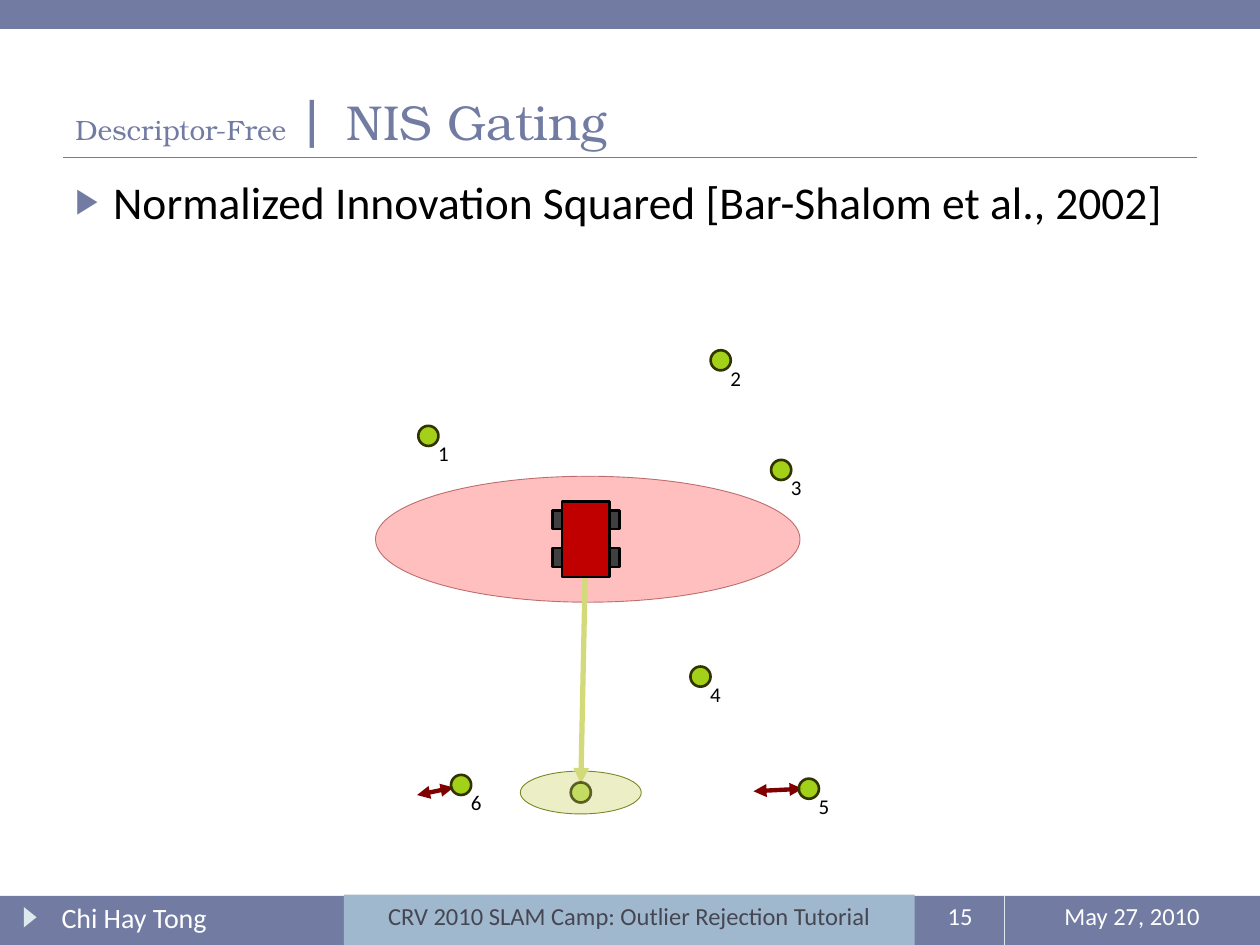
import pptx
import pptx.util
import pptx.dml.color
import pptx.enum.shapes
import pptx.enum.text
import pptx.oxml.ns
from lxml import etree

COLUMNS, ROWS = 100, 75
CELL = pptx.util.Inches(0.1)
COLORS = {
    "theme": "727CA3", "pale": "DDE9EC", "banner": "9FB8CD", "slate": "464653",
    "white": "FFFFFF", "black": "000000", "red": "FF0000", "maroon": "800000",
    "landmark": "99CC00", "landmark_edge": "333300", "gate": "E4E9AF",
    "gate_edge": "7D8525", "ray": "D2DA7A", "robot": "C00000", "wheel": "404040",
}
SERIF, SANS = "TeX Gyre Bonum", "Calibri"
SHAPE = pptx.enum.shapes.MSO_SHAPE
ALIGN = pptx.enum.text.PP_ALIGN
ANCHOR = pptx.enum.text.MSO_ANCHOR
DOT = 1.6
LANDMARKS = [(33.2, 33.8), (56.4, 27.8), (61.2, 36.5), (54.8, 52.9), (63.4, 61.8), (35.8, 61.5)]


def grid(*cells):
    return [round(cell * CELL) for cell in cells]


def rgb(name):
    return pptx.dml.color.RGBColor.from_string(COLORS[name])


def child(parent, tag, **attributes):
    return etree.SubElement(parent, pptx.oxml.ns.qn(tag), attributes)


def paint(fill_format, holder, color, opacity):
    fill_format.solid()
    fill_format.fore_color.rgb = rgb(color)
    if opacity < 100:
        swatch = holder.find(".//" + pptx.oxml.ns.qn("a:srgbClr"))
        child(swatch, "a:alpha", val=str(opacity * 1000))


def add_figure(shapes, kind, at, fill, opacity=100, edge=None, width=1.5, edge_opacity=100):
    figure = shapes.add_shape(kind, *grid(*at))
    figure.shadow.inherit = False
    properties = figure._element.spPr
    paint(figure.fill, properties, fill, opacity)
    if edge:
        figure.line.width = pptx.util.Pt(width)
        outline = properties.find(pptx.oxml.ns.qn("a:ln"))
        paint(figure.line.fill, outline, edge, edge_opacity)
    else:
        figure.line.fill.background()
    return figure


def add_line(shapes, start, end, color, width, heads=()):
    line = shapes.add_connector(pptx.enum.shapes.MSO_CONNECTOR.STRAIGHT, *grid(*start, *end))
    line.line.color.rgb = rgb(color)
    line.line.width = pptx.util.Pt(width)
    outline = line._element.spPr.find(pptx.oxml.ns.qn("a:ln"))
    for head in heads:
        child(outline, head, type="triangle")
    child(line._element.spPr, "a:effectLst")


def style(font, size, color, face=SANS):
    font.size = pptx.util.Pt(size)
    font.name = face
    font.color.rgb = rgb(color)


def set_text(frame, text, size, color, align=ALIGN.LEFT):
    frame.text = text
    frame.vertical_anchor = ANCHOR.TOP
    paragraph = frame.paragraphs[0]
    paragraph.alignment = align
    style(paragraph.runs[0].font, size, color)


def add_text(shapes, at, text, size, color, align=ALIGN.LEFT, wrap=True):
    box = shapes.add_textbox(*grid(*at))
    box.text_frame.word_wrap = wrap
    set_text(box.text_frame, text, size, color, align)
    return box


def add_title(shapes):
    title = shapes.add_textbox(*grid(5, 1.7, 90, 10.8)).text_frame
    title.word_wrap = True
    title.vertical_anchor = ANCHOR.BOTTOM
    for text, size in [("Descriptor-Free ", 16), ("| ", 32), ("NIS Gating", 28)]:
        run = title.paragraphs[0].add_run()
        run.text = text
        style(run.font, size, "theme", SERIF)


def add_bullet(shapes):
    body = add_text(shapes, (5, 13.3, 90, 54),
                    "Normalized Innovation Squared [Bar-Shalom et al., 2002]", 26, "black")
    properties = body.text_frame.paragraphs[0]._p.get_or_add_pPr()
    indent = 3 * CELL
    properties.set("marL", str(indent))
    properties.set("indent", str(-indent))
    child(child(properties, "a:buClr"), "a:srgbClr", val=COLORS["theme"])
    child(properties, "a:buSzPct", val="76000")
    child(properties, "a:buFont", typeface=SANS)
    child(properties, "a:buChar", char="▶")


def add_frame(shapes):
    add_figure(shapes, SHAPE.RECTANGLE, (0, 71.1, COLUMNS, 3.9), "theme")
    add_line(shapes, (5, 12.5), (95, 12.5), "theme", 0.75)
    add_figure(shapes, SHAPE.ISOSCELES_TRIANGLE, (1.6, 72.3, 1.6, 1), "pale").rotation = 90
    add_figure(shapes, SHAPE.RECTANGLE, (0, 0, COLUMNS, 2.3), "theme")
    add_line(shapes, (79.7, 71.1), (79.7, ROWS), "pale", 0.75)


def add_footer(shapes):
    add_text(shapes, (72.7, 71, 7, 4), "15", 14, "white", ALIGN.CENTER)
    add_text(shapes, (79.7, 71, 20.3, 4), "May 27, 2010", 14, "white", ALIGN.CENTER)
    add_text(shapes, (3.9, 71, 21.7, 4), "Chi Hay Tong", 16, "white")
    banner = add_figure(shapes, SHAPE.RECTANGLE, (27.3, 71, 45.3, 4), "banner")
    set_text(banner.text_frame, "CRV 2010 SLAM Camp: Outlier Rejection Tutorial",
             14, "slate", ALIGN.CENTER)


def add_landmark(shapes, number, left, top):
    landmark = shapes.add_group_shape().shapes
    add_figure(landmark, SHAPE.OVAL, (left, top, DOT, DOT), "landmark", 90, "landmark_edge")
    label = add_text(landmark, (left + 0.58, top + 0.7, 2.9, 3), str(number), 12, "black", wrap=False)
    label.text_frame.auto_size = pptx.enum.text.MSO_AUTO_SIZE.SHAPE_TO_FIT_TEXT


def add_robot(shapes):
    robot = shapes.add_group_shape().shapes
    center_x, center_y = 46.5, 42.8
    add_figure(robot, SHAPE.OVAL, (41.3, 61.2, 9.6, 3.4), "gate", 70, "gate_edge", 0.5)
    add_line(robot, (center_x, center_y), (46.1, 62.2), "ray", 3, ["a:tailEnd"])
    add_figure(robot, SHAPE.RECTANGLE, (center_x - 1.9, center_y - 3, 3.8, 6),
               "robot", edge="black")
    for wheel_x in (center_x - 2.65, center_x + 1.9):
        for wheel_y in (center_y - 2.3, center_y + 0.7):
            add_figure(robot, SHAPE.RECTANGLE, (wheel_x, wheel_y, 0.75, 1.5),
                       "wheel", edge="black")
    add_figure(robot, SHAPE.OVAL, (45.3, 62.1, DOT, DOT), "landmark", 50,
               "landmark_edge", edge_opacity=75)


def main():
    deck = pptx.Presentation()
    deck.slide_width, deck.slide_height = COLUMNS * CELL, ROWS * CELL
    shapes = deck.slides.add_slide(deck.slide_layouts[6]).shapes
    add_frame(shapes)
    add_figure(shapes, SHAPE.OVAL, (29.8, 37.8, 33.7, 10), "red", 25, "maroon", 0.5, 50)
    add_title(shapes)
    add_bullet(shapes)
    add_footer(shapes)
    add_robot(shapes)
    for start, end in [((33.1, 63.1), (36, 62.5)), ((59.8, 62.8), (63.7, 62.6))]:
        add_line(shapes, start, end, "maroon", 2.5, ["a:headEnd", "a:tailEnd"])
    for number, (left, top) in enumerate(LANDMARKS, 1):
        add_landmark(shapes, number, left, top)
    deck.save("out.pptx")


if __name__ == "__main__":
    main()
